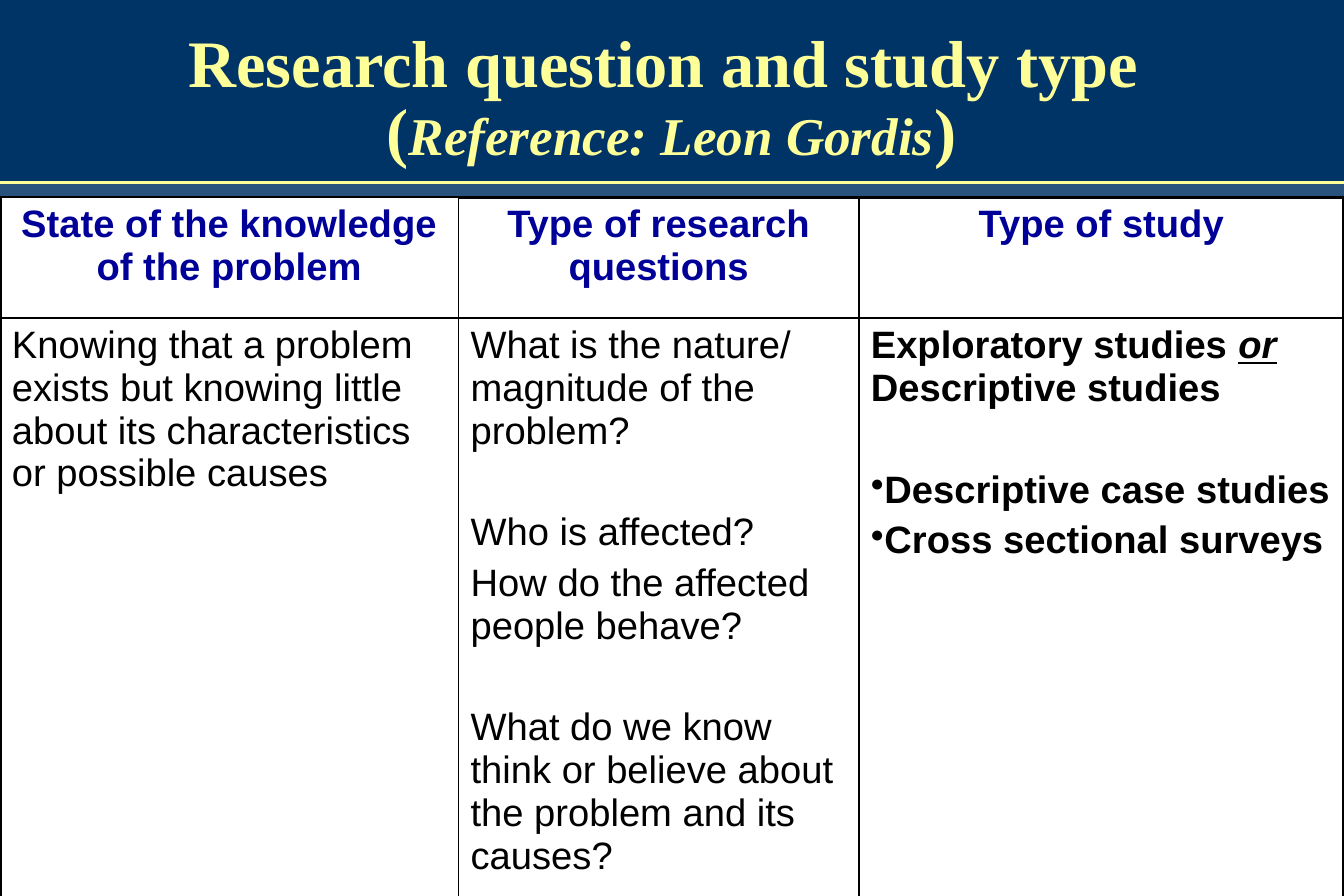
import pptx
import pptx.dml.color
import pptx.enum.shapes
import pptx.enum.text
import pptx.oxml
import pptx.oxml.ns
import pptx.util
import lxml.etree

WIDTH, HEIGHT = pptx.util.Inches(11.25), pptx.util.Inches(7.5)
COLORS = {
    "backdrop": "29537D",
    "band": "003366",
    "title": "FFFF99",
    "heading": "000099",
    "body": "000000",
    "cell": "FFFFFF",
    "border": "000000",
}
COLUMN_SHARES = (34.13, 29.78, 36.09)
ROW_SHARES = (13.47, 64.53)
BAND_SHARE, TABLE_TOP_SHARE = 20.4, 22
TEXT_SIZE, SMALL_GAP, LARGE_GAP = 23, 4.5, 35.5

HEADINGS = (
    "State of the knowledge of the problem",
    "Type of research questions",
    "Type of study",
)
KNOWLEDGE = [
    ("Knowing that a problem exists but knowing little about its "
     "characteristics or possible causes", 0),
]
QUESTIONS = [
    ("What is the nature/ magnitude of the problem?", 0),
    ("Who is affected?", LARGE_GAP),
    ("How do the affected people behave?", SMALL_GAP),
    ("What do we know think or believe about the problem and its causes?", LARGE_GAP),
]
STUDIES = [
    ("Exploratory studies ", 0),
    ("Descriptive case studies", LARGE_GAP),
    ("Cross sectional surveys", SMALL_GAP),
]


def across(share):
    """Return a percentage of the slide's width."""
    return int(WIDTH * share / 100)


def down(share):
    """Return a percentage of the slide's height."""
    return int(HEIGHT * share / 100)


def rgb(name):
    """Look up a colour by its role."""
    return pptx.dml.color.RGBColor.from_string(COLORS[name])


def style_run(run, font, size, color, bold=False, italic=False, underline=False):
    """Give a run its full character format."""
    run.font.name = font
    run.font.size = pptx.util.Pt(size)
    run.font.color.rgb = rgb(color)
    run.font.bold, run.font.italic, run.font.underline = bold, italic, underline


def add_run(paragraph, text):
    """Append a run of text to a paragraph."""
    run = paragraph.add_run()
    run.text = text
    return run


def add_band(slide):
    """Draw the title band and the rule under it."""
    band = slide.shapes.add_shape(
        pptx.enum.shapes.MSO_SHAPE.RECTANGLE, 0, 0, WIDTH, down(BAND_SHARE))
    band.shadow.inherit = False
    band.fill.solid()
    band.fill.fore_color.rgb = rgb("band")
    band.line.fill.background()
    rule = slide.shapes.add_connector(
        pptx.enum.shapes.MSO_CONNECTOR.STRAIGHT,
        0, down(BAND_SHARE), WIDTH, down(BAND_SHARE))
    rule.line.color.rgb = rgb("title")
    rule.line.width = pptx.util.Pt(2)
    lxml.etree.SubElement(rule._element.spPr, pptx.oxml.ns.qn("a:effectLst"))


def add_title(slide):
    """Write the two-line title with its smaller reference."""
    title = slide.shapes.add_textbox(across(7.47), down(2.27), across(84.98), down(18.13))
    frame = title.text_frame
    frame.word_wrap = True
    frame.vertical_anchor = pptx.enum.text.MSO_ANCHOR.MIDDLE
    heading = frame.paragraphs[0]
    heading.text = "Research question and study type \v("
    heading.alignment = pptx.enum.text.PP_ALIGN.CENTER
    heading.line_spacing = 0.85
    reference = add_run(heading, "Reference: Leon Gordis")
    add_run(heading, ")")
    for run in heading.runs:
        style_run(run, "Times New Roman", 40, "title", bold=True)
    reference.font.size = pptx.util.Pt(32)
    reference.font.italic = True


def border_cell(cell, widths):
    """Draw the left, right, top and bottom borders of a cell."""
    for side, width in zip("LRTB", widths):
        cell._tc.get_or_add_tcPr().append(pptx.oxml.parse_xml(
            f'<a:ln{side} {pptx.oxml.ns.nsdecls("a")} w="{pptx.util.Pt(width)}">'
            f'<a:solidFill><a:srgbClr val="{COLORS["border"]}"/></a:solidFill>'
            f'</a:ln{side}>'))


def add_bullet(paragraph):
    """Put a bullet directly before the paragraph's text."""
    properties = paragraph._p.get_or_add_pPr()
    properties.set("marL", "0")
    properties.set("indent", "0")
    bullet = lxml.etree.SubElement(properties, pptx.oxml.ns.qn("a:buChar"))
    bullet.set("char", "•")


def fill_cell(cell, entries, color, bold):
    """Write paragraphs, each with the gap above it, into a white cell."""
    cell.fill.solid()
    cell.fill.fore_color.rgb = rgb("cell")
    cell.text_frame.text = "\n".join(text for text, gap in entries)
    for paragraph, (text, gap) in zip(cell.text_frame.paragraphs, entries):
        paragraph.space_before = pptx.util.Pt(gap)
        for run in paragraph.runs:
            style_run(run, "Arial", TEXT_SIZE, color, bold)


def finish_studies(cell):
    """Complete the study choice and bullet the examples below it."""
    choice, *examples = cell.text_frame.paragraphs
    style_run(add_run(choice, "or"), "Arial", TEXT_SIZE, "body", True, True, True)
    style_run(add_run(choice, " Descriptive studies"), "Arial", TEXT_SIZE, "body", True)
    for example in examples:
        add_bullet(example)


def add_study_table(slide):
    """Build the table that matches knowledge, questions and study types."""
    table = slide.shapes.add_table(
        len(ROW_SHARES), len(COLUMN_SHARES), 0, down(TABLE_TOP_SHARE),
        WIDTH, down(sum(ROW_SHARES))).table
    table.first_row = table.horz_banding = False
    for column, share in zip(table.columns, COLUMN_SHARES):
        column.width = across(share)
    for row, share in zip(table.rows, ROW_SHARES):
        row.height = down(share)
    last = len(COLUMN_SHARES) - 1
    for index, (heading, details) in enumerate(
            zip(HEADINGS, (KNOWLEDGE, QUESTIONS, STUDIES))):
        head, body = table.cell(0, index), table.cell(1, index)
        left = 2.25 if index == 0 else 1
        right = 2.25 if index == last else 1
        border_cell(head, (left, right, 2.25 if index else 1, 1))
        border_cell(body, (left, right, 1, 2.25))
        fill_cell(head, [(heading, 0)], "heading", True)
        head.text_frame.paragraphs[0].alignment = pptx.enum.text.PP_ALIGN.CENTER
        fill_cell(body, details, "body", index == last)
    finish_studies(table.cell(1, last))


def main():
    """Build and save the slide."""
    deck = pptx.Presentation()
    deck.slide_width, deck.slide_height = WIDTH, HEIGHT
    slide = deck.slides.add_slide(deck.slide_layouts[6])
    slide.background.fill.solid()
    slide.background.fill.fore_color.rgb = rgb("backdrop")
    add_band(slide)
    add_title(slide)
    add_study_table(slide)
    deck.save("out.pptx")


if __name__ == "__main__":
    main()
